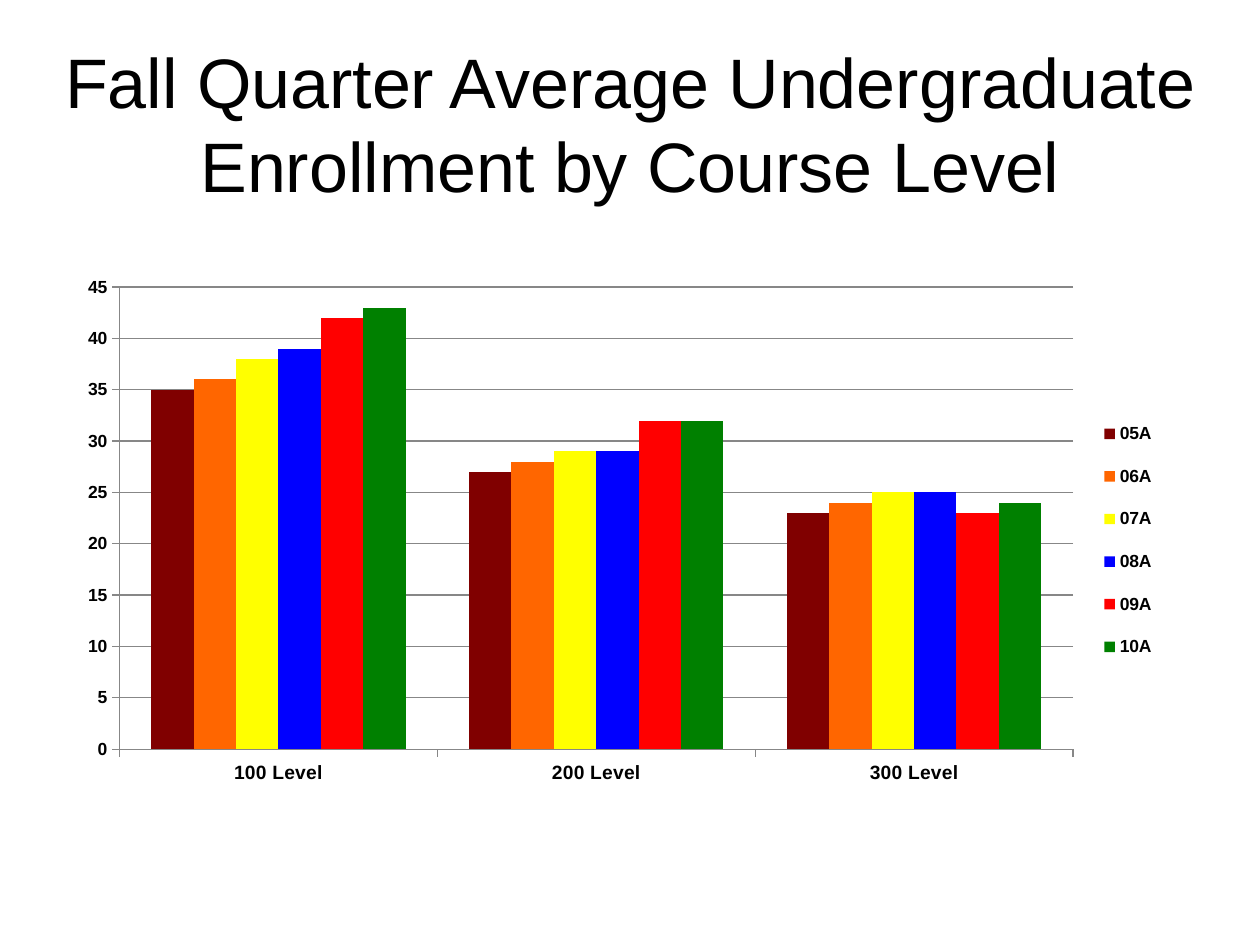
from lxml.etree import SubElement
from pptx import Presentation
from pptx.chart.data import CategoryChartData
from pptx.dml.color import RGBColor
from pptx.enum.chart import XL_CHART_TYPE, XL_LEGEND_POSITION, XL_TICK_MARK
from pptx.enum.text import MSO_ANCHOR, PP_ALIGN
from pptx.oxml.ns import qn
from pptx.util import Inches, Pt

COLORS = {"text": "000000", "line": "878787", "05A": "800000", "06A": "FF6600",
          "07A": "FFFF00", "08A": "0000FF", "09A": "FF0000", "10A": "008000"}
LEVELS = ["100 Level", "200 Level", "300 Level"]
ENROLLMENT = {"05A": (35, 27, 23), "06A": (36, 28, 24), "07A": (38, 29, 25),
              "08A": (39, 29, 25), "09A": (42, 32, 23), "10A": (43, 32, 24)}


def rgb(name):
    return RGBColor.from_string(COLORS[name])


def set_all(obj, values):
    for name, value in values.items():
        setattr(obj, name, value)


def set_layout(element, x, y, w, h, inner=False):
    """Place a chart part by shares of the chart's size."""
    layout = element.get_or_add_layout() if hasattr(element, "get_or_add_layout") else element.find(qn("c:layout"))
    if layout is None:
        layout = SubElement(element, qn("c:layout"))
        element.insert(0, layout)
    manual = SubElement(layout, qn("c:manualLayout"))
    values = {"layoutTarget": "inner"} if inner else {}
    values.update(xMode="edge", yMode="edge", x=x, y=y, w=w, h=h)
    for tag, value in values.items():
        SubElement(manual, qn(f"c:{tag}")).set("val", str(value))


class SlideBuilder:
    font = "Arial"

    def __init__(self, prs):
        self.width, self.height = prs.slide_width, prs.slide_height
        self.s = prs.slides.add_slide(prs.slide_layouts[6])

    def box(self, x, y, w, h):
        """Turn shares of the slide into lengths."""
        return (int(x * self.width), int(y * self.height),
                int(w * self.width), int(h * self.height))

    def style(self, font, size, bold=False):
        set_all(font, {"name": self.font, "size": Pt(size), "bold": bold})
        font.color.rgb = rgb("text")

    def title(self, text, *area):
        tf = self.s.shapes.add_textbox(*self.box(*area)).text_frame
        set_all(tf, {"word_wrap": True, "vertical_anchor": MSO_ANCHOR.MIDDLE})
        p = tf.paragraphs[0]
        set_all(p, {"alignment": PP_ALIGN.CENTER, "line_spacing": Pt(48)})
        r = p.add_run()
        r.text = text
        self.style(r.font, 40)

    def axis(self, axis, size):
        set_all(axis, {"major_tick_mark": XL_TICK_MARK.OUTSIDE,
                       "minor_tick_mark": XL_TICK_MARK.NONE})
        axis.format.line.color.rgb = rgb("line")
        self.style(axis.tick_labels.font, size, bold=True)

    def column_chart(self, categories, series, *area):
        data = CategoryChartData(number_format="0")
        data.categories = categories
        for name, values in series.items():
            data.add_series(name, values)
        chart = self.s.shapes.add_chart(
            XL_CHART_TYPE.COLUMN_CLUSTERED, *self.box(*area), data).chart
        set_all(chart, {"has_title": False, "has_legend": True})
        self.style(chart.font, 10)

        plot = chart.plots[0]
        set_all(plot, {"gap_width": 150, "overlap": 0, "vary_by_categories": False})
        for column in plot.series:
            column.format.fill.solid()
            column.format.fill.fore_color.rgb = rgb(column.name)

        self.axis(chart.category_axis, 11)
        value_axis = chart.value_axis
        self.axis(value_axis, 10)
        set_all(value_axis, {"minimum_scale": 0, "maximum_scale": 45,
                             "major_unit": 5, "has_major_gridlines": True})
        value_axis.major_gridlines.format.line.color.rgb = rgb("line")
        set_all(value_axis.tick_labels, {"number_format": "0",
                                         "number_format_is_linked": False})

        legend = chart.legend
        set_all(legend, {"position": XL_LEGEND_POSITION.RIGHT, "include_in_layout": False})
        self.style(legend.font, 10, bold=True)
        plot_area = chart.element.find(".//" + qn("c:plotArea"))
        set_layout(plot_area, 0.04, 0.14, 0.87, 0.73, inner=True)
        set_layout(chart.element.find(".//" + qn("c:legend")), 0.93, 0.32, 0.06, 0.44)


def main():
    prs = Presentation()
    set_all(prs, {"slide_width": Inches(10), "slide_height": Inches(7.5)})
    slide = SlideBuilder(prs)
    slide.title("Fall Quarter Average Undergraduate Enrollment by Course Level",
                0, 0.04, 1, 0.18)
    slide.column_chart(LEVELS, ENROLLMENT, 0.06, 0.21, 0.87, 0.67)
    prs.save("out.pptx")


if __name__ == "__main__":
    main()
